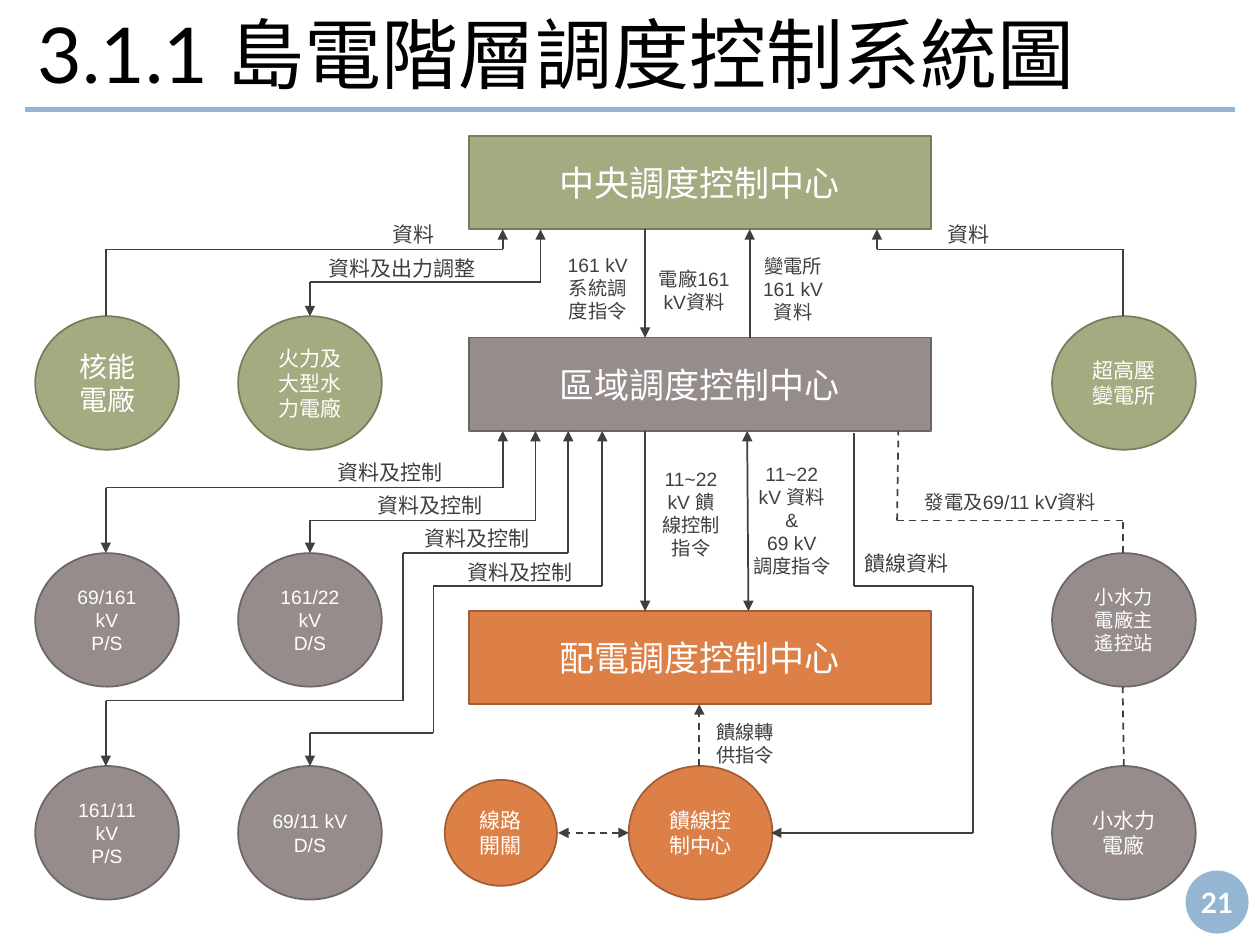
from dataclasses import dataclass
from itertools import pairwise

from lxml import etree
from pptx import Presentation
from pptx.dml.color import RGBColor
from pptx.enum.dml import MSO_LINE
from pptx.enum.shapes import MSO_CONNECTOR, MSO_SHAPE
from pptx.enum.text import MSO_ANCHOR, MSO_AUTO_SIZE, PP_ALIGN
from pptx.oxml.ns import qn
from pptx.util import Inches, Pt

STRAIGHT = MSO_CONNECTOR.STRAIGHT
RECTANGLE, OVAL = MSO_SHAPE.RECTANGLE, MSO_SHAPE.OVAL
LEFT, CENTER = PP_ALIGN.LEFT, PP_ALIGN.CENTER
MIDDLE = MSO_ANCHOR.MIDDLE
DASH = MSO_LINE.DASH
COLORS = {
    "black": "000000", "white": "FFFFFF", "ink": "3F3F3F", "blue": "94B6D2",
    "green": "A5AB81", "green edge": "787C5E",
    "gray": "968C8C", "gray edge": "6D6666",
    "orange": "DD8047", "orange edge": "A15D33",
}


@dataclass
class Node:
    text: str
    left: float
    top: float
    color: str
    size: int
    width: float = 1.14
    height: float = 1.06
    kind: MSO_SHAPE = OVAL


@dataclass
class Route:
    points: list[tuple[float, float]]
    start_arrow: bool = False
    end_arrow: bool = False
    dashed: bool = False


@dataclass
class Label:
    text: str
    left: float
    top: float
    width: float
    height: float = 0.31
    size: int = 11


FIRST, SECOND, LAST = 0.28, 1.89, 8.35
UPPER, MIDDLE_ROW, LOWER = 2.51, 4.39, 6.08
FIRST_X, SECOND_X, LAST_X = 0.84, 2.46, 8.91
CENTRAL_BASE, REGIONAL_TOP, REGIONAL_BASE = 1.82, 2.68, 3.42
DISTRIBUTION_TOP, DISTRIBUTION_BASE = 4.85, 5.59
FEEDER_Y = 6.61

CENTERS = [
    Node(text, 3.72, top, color, 20, 3.67, 0.74, RECTANGLE)
    for text, top, color in (
        ("中央調度控制中心", 1.08, "green"),
        ("區域調度控制中心", REGIONAL_TOP, "gray"),
        ("配電調度控制中心", DISTRIBUTION_TOP, "orange"),
    )
]
STATIONS = [
    Node("核能電廠", FIRST, UPPER, "green", 16),
    Node("火力及大型水力電廠", SECOND, UPPER, "green", 12),
    Node("超高壓變電所", LAST, UPPER, "green", 12),
    Node("69/161 kV\vP/S", FIRST, MIDDLE_ROW, "gray", 11),
    Node("161/22 kV\vD/S", SECOND, MIDDLE_ROW, "gray", 11),
    Node("小水力電廠主遙控站", LAST, MIDDLE_ROW, "gray", 11),
    Node("161/11 kV\vP/S", FIRST, LOWER, "gray", 11),
    Node("69/11 kV\vD/S", SECOND, LOWER, "gray", 11),
    Node("小水力電廠", LAST, LOWER, "gray", 12),
    Node("饋線控制中心", 4.99, LOWER, "orange", 12),
    Node("線路開關", 3.53, 6.19, "orange", 12, 0.89, 0.84),
]
ROUTES = [
    Route([(FIRST_X, UPPER), (FIRST_X, 1.98), (3.99, 1.98), (3.99, CENTRAL_BASE)], end_arrow=True),
    Route([(SECOND_X, UPPER), (SECOND_X, 2.24), (4.29, 2.24), (4.29, CENTRAL_BASE)], True, True),
    Route([(LAST_X, UPPER), (LAST_X, 1.98), (6.96, 1.98), (6.96, CENTRAL_BASE)], end_arrow=True),
    Route([(5.12, REGIONAL_TOP), (5.12, CENTRAL_BASE)], start_arrow=True),
    Route([(5.95, REGIONAL_TOP), (5.95, CENTRAL_BASE)], end_arrow=True),
    Route([(FIRST_X, MIDDLE_ROW), (FIRST_X, 3.87), (3.99, 3.87), (3.99, REGIONAL_BASE)], True, True),
    Route([(SECOND_X, MIDDLE_ROW), (SECOND_X, 4.13), (4.25, 4.13), (4.25, REGIONAL_BASE)], True, True),
    Route([(FIRST_X, LOWER), (FIRST_X, 5.56), (3.2, 5.56), (3.2, 4.39), (4.51, 4.39),
           (4.51, REGIONAL_BASE)], True, True),
    Route([(SECOND_X, LOWER), (SECOND_X, 5.82), (3.44, 5.82), (3.44, 4.65), (4.78, 4.65),
           (4.78, REGIONAL_BASE)], True, True),
    Route([(5.12, DISTRIBUTION_TOP), (5.12, REGIONAL_BASE)], start_arrow=True),
    Route([(5.94, DISTRIBUTION_TOP), (5.93, REGIONAL_BASE)], True, True),
    Route([(6.12, FEEDER_Y), (7.72, FEEDER_Y), (7.72, 4.65), (6.78, 4.65), (6.78, 3.44)], start_arrow=True),
    Route([(LAST_X, MIDDLE_ROW), (LAST_X, 4.13), (7.12, 4.13), (7.13, REGIONAL_BASE)], dashed=True),
    Route([(8.92, LOWER), (LAST_X, 5.45)], dashed=True),
    Route([(5.55, LOWER), (5.55, DISTRIBUTION_BASE)], end_arrow=True, dashed=True),
    Route([(4.99, FEEDER_Y), (4.43, FEEDER_Y)], True, True, True),
]
LABELS = [
    Label("資料", 3.02, 1.71, 0.6, size=12),
    Label("資料", 7.42, 1.71, 0.6, size=12),
    Label("資料及出力調整", 2.51, 1.98, 1.53, size=12),
    *[Label("資料及控制", left, top, 1.16, size=12)
      for left, top in ((2.58, 3.6), (2.9, 3.86), (3.27, 4.12), (3.61, 4.39))],
    Label("饋線資料", 6.76, 4.32, 0.97, size=12),
    Label("161 kV\n系統調\n度指令", 4.36, 1.96, 0.77, 0.68),
    Label("電廠161\vkV資料", 5.08, 2.07, 0.86, 0.49),
    Label("變電所\v161 kV\v資料", 5.91, 1.97, 0.77, 0.68),
    Label("11~22\vkV 饋\v線控制\v指令", 5.11, 3.66, 0.75, 0.88),
    Label("11~22\vkV 資料\n&\v69 kV\n調度指令", 5.83, 3.62, 0.91, 1.07),
    Label("發電及69/11 kV資料", 7.12, 3.84, 1.8),
    Label("饋線轉\v供指令", 5.55, 5.67, 0.73, 0.49),
]


def rgb(name: str) -> RGBColor:
    return RGBColor.from_string(COLORS[name])


def write(shape, text: str, size: int, color: str, align: PP_ALIGN = CENTER,
          font: str = "Arial", bold: bool = False) -> None:
    frame = shape.text_frame
    frame.word_wrap = True
    frame.auto_size = MSO_AUTO_SIZE.NONE
    frame.text = text
    for para in frame.paragraphs:
        para.alignment = align
        para.font.name = font
        para.font.size = Pt(size)
        para.font.bold = bold
        para.font.color.rgb = rgb(color)


def draw_shape(page, kind: MSO_SHAPE, left: float, top: float, width: float, height: float, fill: str):
    shape = page.shapes.add_shape(kind, Inches(left), Inches(top), Inches(width), Inches(height))
    shape.shadow.inherit = False
    shape.fill.solid()
    shape.fill.fore_color.rgb = rgb(fill)
    shape.text_frame.vertical_anchor = MIDDLE
    return shape


def draw_node(page, node: Node) -> None:
    shape = draw_shape(page, node.kind, node.left, node.top, node.width, node.height, node.color)
    shape.line.color.rgb = rgb(f"{node.color} edge")
    shape.line.width = Pt(1)
    write(shape, node.text, node.size, "white")


def draw_line(page, start: tuple[float, float], end: tuple[float, float], color: str, width: float):
    line = page.shapes.add_connector(STRAIGHT, *map(Inches, (*start, *end)))
    line.line.color.rgb = rgb(color)
    line.line.width = Pt(width)
    etree.SubElement(line._element.spPr, qn("a:effectLst"))
    return line


def draw_route(page, route: Route) -> None:
    segments = [draw_line(page, start, end, "ink", 1) for start, end in pairwise(route.points)]
    if route.dashed:
        for segment in segments:
            segment.line.dash_style = DASH
    if route.start_arrow:
        etree.SubElement(segments[0].line._get_or_add_ln(), qn("a:headEnd"), type="triangle")
    if route.end_arrow:
        etree.SubElement(segments[-1].line._get_or_add_ln(), qn("a:tailEnd"), type="triangle")


def draw_label(page, label: Label) -> None:
    box = page.shapes.add_textbox(*map(Inches, (label.left, label.top, label.width, label.height)))
    write(box, label.text, label.size, "ink", LEFT if label.size == 12 else CENTER)


def draw_title(page) -> None:
    title = page.shapes.title
    title.left, title.top, title.width, title.height = map(Inches, (0.2, 0.13, 9.61, 0.63))
    title.text_frame.vertical_anchor = MIDDLE
    title.text_frame.margin_bottom = Inches(0.1)
    write(title, "3.1.1 島電階層調度控制系統圖", 44, "black", LEFT, "Lato")
    draw_line(page, (0.2, 0.87), (9.8, 0.87), "blue", 3)


def draw_page_number(page) -> None:
    badge = draw_shape(page, OVAL, 9.41, 6.91, 0.5, 0.5, "blue")
    badge.line.fill.background()
    frame = badge.text_frame
    frame.margin_left = frame.margin_right = frame.margin_top = frame.margin_bottom = 0
    write(badge, "21", 16, "white", font="Lato", bold=True)


def main() -> None:
    deck = Presentation()
    deck.slide_width, deck.slide_height = Inches(10), Inches(7.5)
    page = deck.slides.add_slide(deck.slide_layouts[5])
    draw_title(page)
    draw_page_number(page)
    for node in CENTERS + STATIONS:
        draw_node(page, node)
    for route in ROUTES:
        draw_route(page, route)
    for label in LABELS:
        draw_label(page, label)
    deck.save("out.pptx")


if __name__ == "__main__":
    main()
